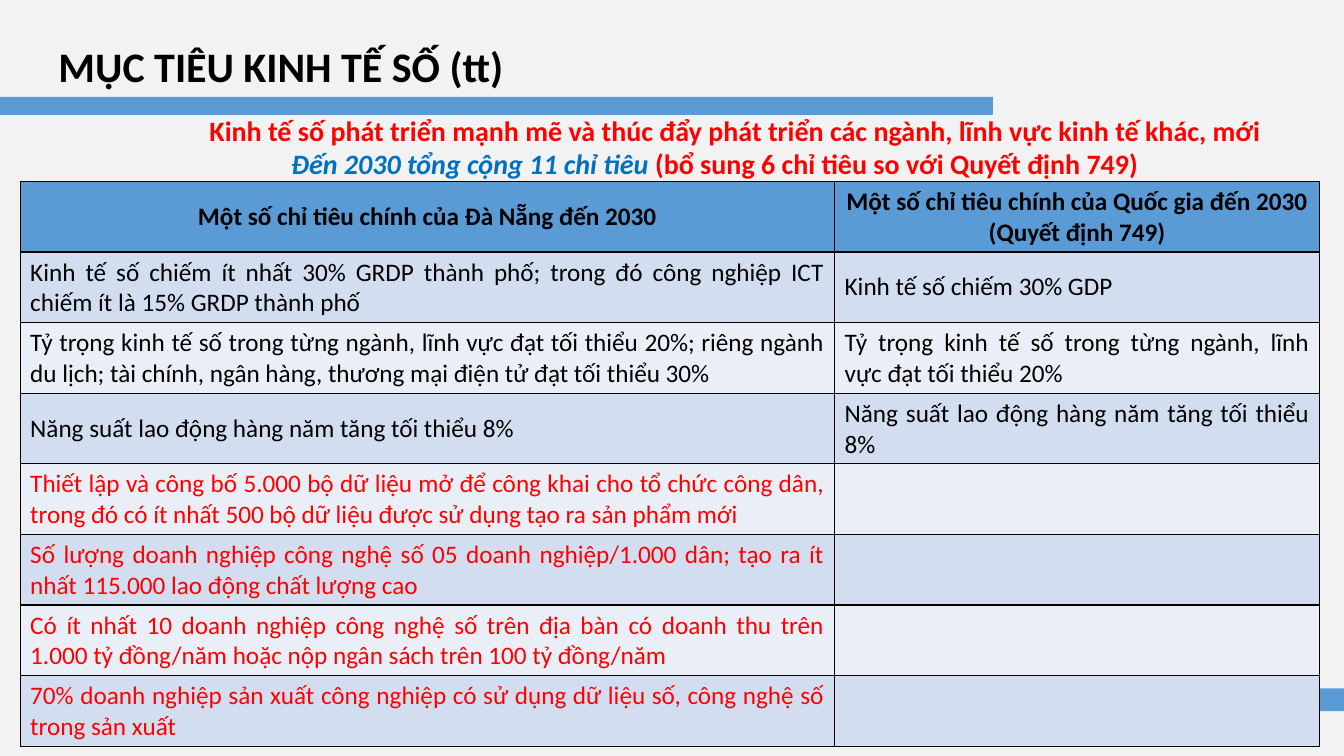
from dataclasses import dataclass

from lxml import etree
from pptx import Presentation
from pptx import util as u
from pptx.dml.color import RGBColor
from pptx.enum import shapes, text
from pptx.oxml import ns

COLOURS = {
    "page": "F2F2F2",
    "blue": "5B9BD5",
    "band": "D2DEEF",
    "light band": "EAEFF7",
    "black": "000000",
    "red": "FF0000",
    "accent": "0070C0",
}
ALIGN = text.PP_ALIGN
ROW_HEIGHT = 50.4
COLUMN_WIDTHS = (581.76, 346.32)


@dataclass
class Area:
    left: float
    top: float
    width: float
    height: float

    def lengths(self) -> list:
        return [u.Pt(n) for n in (self.left, self.top, self.width, self.height)]


@dataclass
class Span:
    words: str
    colour: str = "black"
    size: float = 18
    bold: bool = False
    italic: bool = False


@dataclass
class Caption:
    area: Area
    spans: list[Span]
    align: ALIGN
    wrap: bool
    gap: float


@dataclass
class Goal:
    city: str
    nation: str = ""
    colour: str = "black"


BARS = [Area(893.52, 491.76, 66.48, 16.2), Area(0, 69.12, 709.2, 12.96)]

CAPTIONS = [
    Caption(Area(200.88, 100.8, 621.36, 31.68), [
        Span("Đến 2030 tổng cộng 11 chỉ tiêu", "accent", 20, True, True),
        Span(" (bổ sung 6 chỉ tiêu so với Quyết định 749)", "red", 20, True),
    ], ALIGN.LEFT, False, 0),
    Caption(Area(136.8, 77.76, 776.88, 31.68), [
        Span("Kinh tế số phát triển mạnh mẽ và thúc đẩy phát triển các ngành, "
             "lĩnh vực kinh tế khác, mới", "red", 20, True),
    ], ALIGN.CENTER, True, 3),
]

HEADINGS = Goal("Một số chỉ tiêu chính của Đà Nẵng đến 2030",
                "Một số chỉ tiêu chính của Quốc gia đến 2030\n(Quyết định 749)")
GOALS = [
    Goal("Kinh tế số chiếm ít nhất 30% GRDP thành phố; trong đó công nghiệp ICT "
         "chiếm ít là 15% GRDP thành phố",
         "Kinh tế số chiếm 30% GDP"),
    Goal("Tỷ trọng kinh tế số trong từng ngành, lĩnh vực đạt tối thiểu 20%; riêng ngành "
         "du lịch; tài chính, ngân hàng, thương mại điện tử đạt tối thiểu 30%",
         "Tỷ trọng kinh tế số trong từng ngành, lĩnh vực đạt tối thiểu 20%"),
    Goal("Năng suất lao động hàng năm tăng tối thiểu 8%",
         "Năng suất lao động hàng năm tăng tối thiểu 8%"),
    Goal("Thiết lập và công bố 5.000 bộ dữ liệu mở để công khai cho tổ chức công dân, "
         "trong đó có ít nhất 500 bộ dữ liệu được sử dụng tạo ra sản phẩm mới", colour="red"),
    Goal("Số lượng doanh nghiệp công nghệ số 05 doanh nghiệp/1.000 dân; tạo ra ít "
         "nhất 115.000 lao động chất lượng cao", colour="red"),
    Goal("Có ít nhất 10 doanh nghiệp công nghệ số trên địa bàn có doanh thu trên "
         "1.000 tỷ đồng/năm hoặc nộp ngân sách trên 100 tỷ đồng/năm", colour="red"),
    Goal("70% doanh nghiệp sản xuất công nghiệp có sử dụng dữ liệu số, công nghệ số "
         "trong sản xuất", colour="red"),
]


def rgb(name: str) -> RGBColor:
    return RGBColor.from_string(COLOURS[name])


def set_all(target, values: dict) -> None:
    for name, value in values.items():
        setattr(target, name, value)


def paint(fill, colour: str) -> None:
    fill.solid()
    fill.fore_color.rgb = rgb(colour)


def write(para, spans: list[Span], align: ALIGN) -> None:
    para.alignment = align
    for span in spans:
        run = para.add_run()
        run.text = span.words
        set_all(run.font, {"name": "Calibri", "size": u.Pt(span.size),
                           "bold": span.bold, "italic": span.italic})
        run.font.color.rgb = rgb(span.colour)


def add_bar(page, area: Area) -> None:
    bar = page.shapes.add_shape(shapes.MSO_SHAPE.RECTANGLE, *area.lengths())
    bar.shadow.inherit = False
    paint(bar.fill, "blue")
    bar.line.fill.background()


def place_title(page, area: Area, span: Span) -> None:
    title = page.shapes.title
    set_all(title, dict(zip(("left", "top", "width", "height"), area.lengths())))
    set_all(title.text_frame, {"word_wrap": True, "vertical_anchor": text.MSO_ANCHOR.TOP,
                               "auto_size": text.MSO_AUTO_SIZE.SHAPE_TO_FIT_TEXT})
    write(title.text_frame.paragraphs[0], [span], ALIGN.LEFT)


def add_caption(page, caption: Caption) -> None:
    box = page.shapes.add_textbox(*caption.area.lengths())
    set_all(box.text_frame, {"word_wrap": caption.wrap,
                             "auto_size": text.MSO_AUTO_SIZE.SHAPE_TO_FIT_TEXT})
    para = box.text_frame.paragraphs[0]
    set_all(para, {"space_before": u.Pt(caption.gap), "space_after": u.Pt(caption.gap)})
    write(para, caption.spans, caption.align)


def add_borders(cell) -> None:
    """Draw a thin black line on all four sides; call before filling the cell."""
    properties = cell._tc.get_or_add_tcPr()
    for side in ("a:lnL", "a:lnR", "a:lnT", "a:lnB"):
        line = etree.SubElement(properties, ns.qn(side), w=str(u.Pt(1)))
        fill = etree.SubElement(line, ns.qn("a:solidFill"))
        etree.SubElement(fill, ns.qn("a:srgbClr"), val=COLOURS["black"])


def fill_cell(cell, words: str, colour: str, fill: str, heading: bool) -> None:
    add_borders(cell)
    paint(cell.fill, fill)
    cell.vertical_anchor = text.MSO_ANCHOR.MIDDLE
    if not words:
        return
    align = ALIGN.CENTER if heading else ALIGN.JUSTIFY
    for index, line in enumerate(words.split("\n")):
        frame = cell.text_frame
        para = frame.add_paragraph() if index else frame.paragraphs[0]
        write(para, [Span(line, colour, bold=heading)], align)


def add_goal_table(page, left: float, top: float) -> None:
    goals = [HEADINGS, *GOALS]
    area = Area(left, top, sum(COLUMN_WIDTHS), ROW_HEIGHT * len(goals))
    table = page.shapes.add_table(len(goals), len(COLUMN_WIDTHS), *area.lengths()).table
    for column, width in zip(table.columns, COLUMN_WIDTHS):
        column.width = u.Pt(width)
    for index, goal in enumerate(goals):
        table.rows[index].height = u.Pt(ROW_HEIGHT)
        heading = index == 0
        fill = "blue" if heading else ("band" if index % 2 else "light band")
        for cell, words in zip(table.rows[index].cells, (goal.city, goal.nation)):
            fill_cell(cell, words, goal.colour, fill, heading)


def main() -> None:
    deck = Presentation()
    set_all(deck, {"slide_width": u.Pt(960), "slide_height": u.Pt(540)})
    page = deck.slides.add_slide(deck.slide_layouts.get_by_name("Title Only"))
    paint(page.background.fill, "page")
    place_title(page, Area(34.56, 25.2, 821.52, 43.92),
                Span("MỤC TIÊU KINH TẾ SỐ (tt)", size=30, bold=True))
    for area in BARS:
        add_bar(page, area)
    add_goal_table(page, 14.4, 129.6)
    for caption in CAPTIONS:
        add_caption(page, caption)
    deck.save("out.pptx")


if __name__ == "__main__":
    main()
